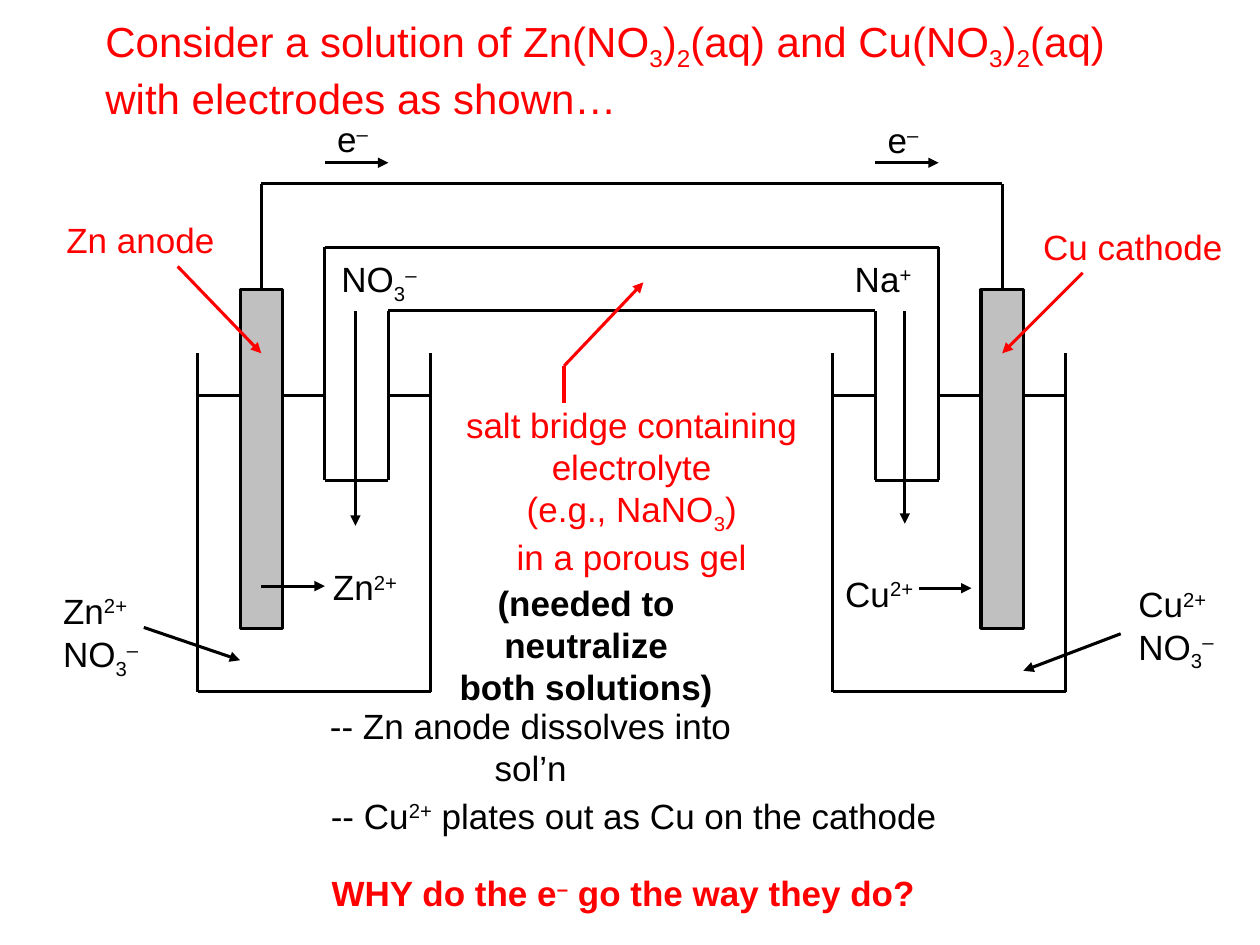
from lxml.etree import SubElement
from pptx import Presentation
from pptx.dml.color import RGBColor
from pptx.enum.shapes import MSO_CONNECTOR, MSO_SHAPE
from pptx.enum.text import MSO_ANCHOR, PP_ALIGN
from pptx.oxml.ns import qn
from pptx.util import Inches, Pt

UNIT, LEFT, TOP = 0.168, 1.57, 1.46
LAST_COLUMN = 41
BLACK, RED, GRAY = "000000", "FF0000", "C0C0C0"
BASELINES = {"_": "-25000", "^": "30000"}

HALF_CELL_LINES = [
    (3, 5, 3, 0), (0, 8, 0, 24), (0, 24, 11, 24), (11, 24, 11, 8),
    (9, 14, 6, 14), (9, 14, 9, 6), (6, 14, 6, 3),
    (0, 10, 2, 10), (4, 10, 6, 10), (9, 10, 11, 10),
]
SPANNING_LINES = [(9, 6, 32, 6), (6, 3, 35, 3), (3, 0, 38, 0)]
ARROWS = [
    (6, -1, 9, -1, BLACK), (32, -1, 35, -1, BLACK),
    (41.8, 4.2, 38, 8, RED), (-0.95, 3.9, 3, 8, RED), (17.3, 8.6, 21.05, 4.65, RED),
    (43.6, 21.25, 39, 23, BLACK), (-2.55, 20.95, 2, 22.5, BLACK),
    (3, 19, 6, 19, BLACK), (34.05, 19.1, 36.55, 19.1, BLACK),
    (7.45, 6, 7.45, 16.15, BLACK), (33.4, 6, 33.4, 16.05, BLACK),
]
ION_LABELS = [
    ("e|^–", 6, -3.45), ("e|^–", 32, -3.4),
    ("Cu|^2+", 43.85, 18.55), ("NO|_3|^–", 43.85, 20.55),
    ("Zn|^2+", -6.95, 18.85), ("NO|_3|^–", -6.95, 20.9),
    ("Zn|^2+", 5.8, 17.75), ("Cu|^2+", 30, 18.05),
    ("NO|_3|^–", 6.2, 3.2), ("Na|^+", 30.45, 3.2),
]
ELECTRODE_LABELS = [("Cu cathode", 39.35, 1.65), ("Zn anode", -6.8, 1.35)]
TITLE = ["Consider a solution of Zn(NO|_3|)|_2|(aq) and Cu(NO|_3|)|_2|(aq)",
         "with electrodes as shown…"]
BRIDGE_NOTE = ["salt bridge containing", "electrolyte", "(e.g., NaNO|_3|)", "in a porous gel"]
CAPTIONS = [
    (["WHY do the e|^–| go the way they do?"], (5.7, 32.2, 28.8, 2.55), RED, True, 0),
    (["(needed to neutralize", "both solutions)"], (11.8, 19.45, 17.75, 4.6), BLACK, True, 4.65),
    (["-- Zn anode dissolves into sol’n"], (5.65, 25.3, 24, 2.55), BLACK, False, 3.85),
    (["-- Cu|^2+| plates out as Cu on the cathode"], (5.65, 28.55, 29.9, 2.55), BLACK, False, 0),
]


def color(hex_value):
    """Turn a hex string into a colour."""
    return RGBColor.from_string(hex_value)


def cells(count):
    """Length of a number of grid cells."""
    return Inches(count * UNIT)


def point(column, row):
    """Position of a grid crossing on the slide."""
    return Inches(LEFT) + cells(column), Inches(TOP) + cells(row)


def apply(target, values):
    """Set each attribute of the target from a dict."""
    for name, value in values.items():
        setattr(target, name, value)


def add_line(slide, start, end, line_color=BLACK, arrow=False):
    """Draw a straight line between two grid crossings."""
    connector = slide.shapes.add_connector(MSO_CONNECTOR.STRAIGHT, *point(*start), *point(*end))
    connector.line.width = Pt(1.75)
    connector.line.color.rgb = color(line_color)
    properties = connector._element.spPr
    if arrow:
        SubElement(properties.find(qn("a:ln")), qn("a:tailEnd"), type="triangle")
    SubElement(properties, qn("a:effectLst"))


def add_electrode(slide, column):
    """Draw one grey metal strip."""
    shape = slide.shapes.add_shape(
        MSO_SHAPE.RECTANGLE, *point(column, 5), cells(2), cells(16))
    shape.shadow.inherit = False
    shape.fill.solid()
    shape.fill.fore_color.rgb = color(GRAY)
    shape.line.color.rgb = color(BLACK)
    shape.line.width = Pt(1.75)


def add_text(slide, lines, box, text_color=BLACK, size=20, bold=False,
             align=PP_ALIGN.LEFT, frame_format=None):
    """Write lines in a grid box; | splits runs, _ lowers and ^ raises one."""
    column, row, width, height = box
    shape = slide.shapes.add_textbox(*point(column, row), cells(width), cells(height))
    frame = shape.text_frame
    apply(frame, {"word_wrap": True, **(frame_format or {})})
    for index, line in enumerate(lines):
        paragraph = frame.add_paragraph() if index else frame.paragraphs[0]
        paragraph.alignment = align
        for part in line.split("|"):
            run = paragraph.add_run()
            run.text = part.lstrip("_^")
            apply(run.font, {"name": "Arial", "size": Pt(size), "bold": bold})
            run.font.color.rgb = color(text_color)
            if part[0] in BASELINES:
                run._r.get_or_add_rPr().set("baseline", BASELINES[part[0]])


def add_apparatus(slide):
    """Draw both half-cells, the salt bridge, the wire and the arrows."""
    for column in (2, LAST_COLUMN - 4):
        add_electrode(slide, column)
    for x1, y1, x2, y2 in HALF_CELL_LINES:
        add_line(slide, (x1, y1), (x2, y2))
        add_line(slide, (LAST_COLUMN - x1, y1), (LAST_COLUMN - x2, y2))
    for x1, y1, x2, y2 in SPANNING_LINES:
        add_line(slide, (x1, y1), (x2, y2))
    add_line(slide, (17.3, 8.6), (17.3, 10.35), RED)
    for x1, y1, x2, y2, arrow_color in ARROWS:
        add_line(slide, (x1, y1), (x2, y2), arrow_color, arrow=True)


def add_labels(slide):
    """Write the title, the labels and the captions."""
    add_text(slide, TITLE, (-4.95, -8.1, 48.8, 5.35), RED, 24,
             frame_format={"vertical_anchor": MSO_ANCHOR.MIDDLE, "margin_right": 0})
    for text, column, row in ION_LABELS:
        add_text(slide, [text], (column, row, 5, 3))
    for text, column, row in ELECTRODE_LABELS:
        add_text(slide, [text], (column, row, 10, 3), RED)
    add_text(slide, BRIDGE_NOTE, (12, 10.1, 17, 9), RED, align=PP_ALIGN.CENTER)
    for lines, box, text_color, bold, right_margin in CAPTIONS:
        add_text(slide, lines, box, text_color, bold=bold, align=PP_ALIGN.CENTER,
                 frame_format={"vertical_anchor": MSO_ANCHOR.MIDDLE, "margin_left": 0,
                               "margin_right": cells(right_margin)})


def main():
    """Build the galvanic cell slide."""
    presentation = Presentation()
    apply(presentation, {"slide_width": Inches(10), "slide_height": Inches(7.5)})
    slide = presentation.slides.add_slide(presentation.slide_layouts[6])
    add_apparatus(slide)
    add_labels(slide)
    presentation.save("out.pptx")


if __name__ == "__main__":
    main()
